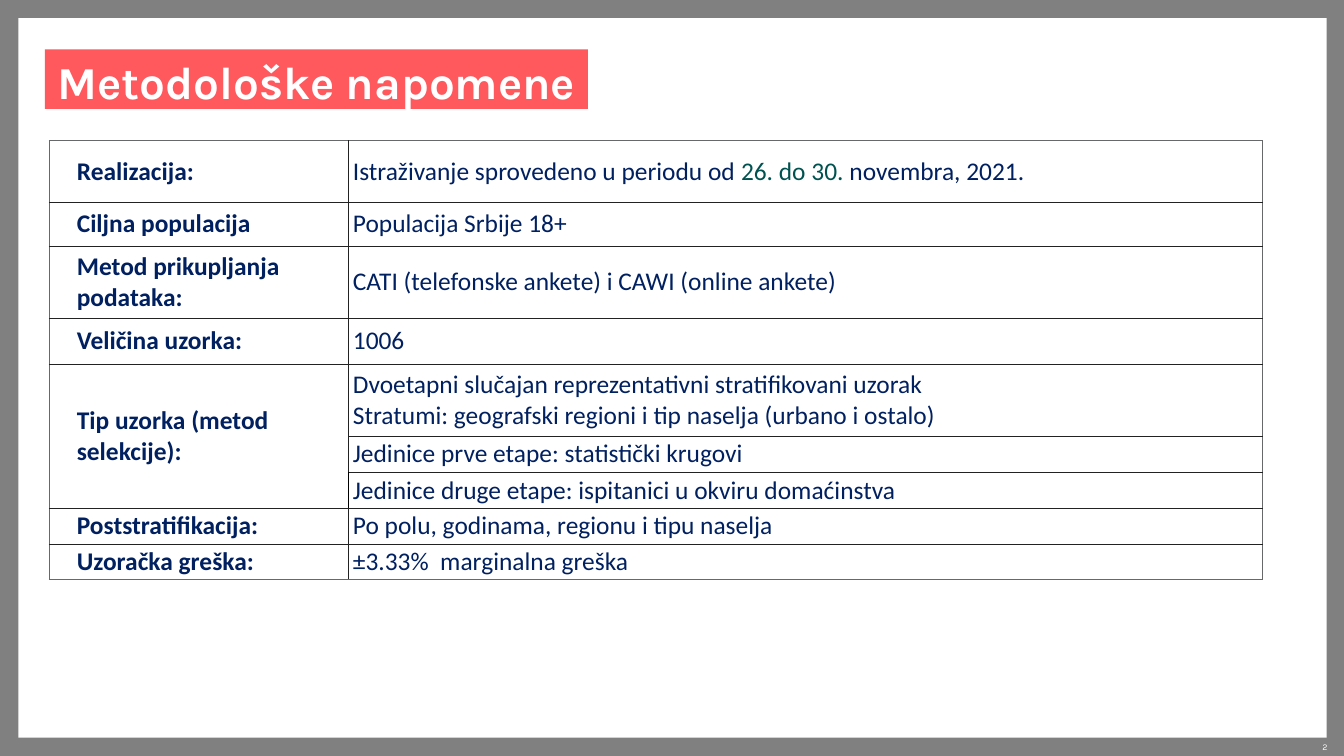
"""Build the survey method notes slide."""
from dataclasses import dataclass

from lxml.etree import SubElement
from pptx import Presentation
from pptx.dml.color import RGBColor as Rgb
from pptx.enum.shapes import MSO_SHAPE as Shape
from pptx.enum.text import MSO_ANCHOR as Anchor, PP_ALIGN as Align
from pptx.oxml.ns import qn
from pptx.util import Inches, Pt


@dataclass(frozen=True)
class Theme:
    """Hold colours, fonts and type sizes."""
    back: str = "808080"
    white: str = "FFFFFF"
    red: str = "FF585D"
    navy: str = "002060"
    teal: str = "005250"
    outer: str = "66686A"
    inner: str = "222223"
    black: str = "000000"
    head: str = "Karla"
    body: str = "Calibri"
    title: float = 36
    text: float = 20
    page: float = 7


@dataclass(frozen=True)
class Box:
    """Hold a place in inches."""
    left: float
    top: float
    width: float
    height: float

    def place(self) -> tuple:
        """Give the place as lengths."""
        return tuple(Inches(n) for n in (self.left, self.top, self.width, self.height))


@dataclass(frozen=True)
class Run:
    """Hold a piece of text and its colour."""
    text: str
    color: str


@dataclass(frozen=True)
class Row:
    """Hold a table row: height, label and lines of runs."""
    height: float
    label: str
    lines: tuple


LOOK = Theme()
COLS = (3.27, 10)
SEAM = 6


def plain(*lines: str) -> tuple:
    """Make one navy run for each line."""
    return tuple((Run(line, LOOK.navy),) for line in lines)


PERIOD = ((
    Run("Istraživanje sprovedeno u periodu od ", LOOK.navy),
    Run("26. do 30. ", LOOK.teal),
    Run("novembra, 2021.", LOOK.navy),
),)

ROWS = (
    Row(0.67, "Realizacija:", PERIOD),
    Row(0.48, "Ciljna populacija", plain("Populacija Srbije 18+")),
    Row(0.79, "Metod prikupljanja podataka:",
        plain("CATI (telefonske ankete) i CAWI (online ankete)")),
    Row(0.5, "Veličina uzorka:", plain("1006")),
    Row(0.79, "Tip uzorka (metod selekcije):",
        plain("Dvoetapni slučajan reprezentativni stratifikovani uzorak",
              "Stratumi: geografski regioni i tip naselja (urbano i ostalo)")),
    Row(0.4, "", plain("Jedinice prve etape: statistički krugovi")),
    Row(0.39, "", plain("Jedinice druge etape: ispitanici u okviru domaćinstva")),
    Row(0.39, "Poststratifikacija:", plain("Po polu, godinama, regionu i tipu naselja")),
    Row(0.39, "Uzoračka greška:", plain("±3.33%  marginalna greška")),
)


def write(para, text: str, *, size: float = LOOK.text, color: str = LOOK.navy,
          font: str = LOOK.body, bold: bool = False) -> None:
    """Add a formatted run to a paragraph."""
    run = para.add_run()
    run.text = text
    run.font.size = Pt(size)
    run.font.name = font
    run.font.bold = bold
    run.font.color.rgb = Rgb.from_string(color)


def panel(slide, box: Box, color: str):
    """Draw a filled rectangle with no line."""
    shape = slide.shapes.add_shape(Shape.RECTANGLE, *box.place())
    shape.shadow.inherit = False
    shape.fill.solid()
    shape.fill.fore_color.rgb = Rgb.from_string(color)
    shape.line.fill.background()
    return shape


def inset(frame, left: float, top: float, right: float, low: float) -> None:
    """Set the four margins of a frame or cell."""
    frame.margin_left, frame.margin_top = Inches(left), Inches(top)
    frame.margin_right, frame.margin_bottom = Inches(right), Inches(low)


def border(cell, row: int, col: int) -> None:
    """Line a cell: outer edges, inner rules and the dark seam."""
    edges = {"lnL": col == 0, "lnR": col == len(COLS) - 1,
             "lnT": row == 0, "lnB": row == len(ROWS) - 1}
    props = cell._tc.get_or_add_tcPr()
    for spot, (tag, edge) in enumerate(edges.items()):
        seam = row == SEAM and (col, tag) in ((0, "lnR"), (1, "lnL"))
        color = LOOK.black if seam else LOOK.outer if edge else LOOK.inner
        width = Pt(1 if edge or seam else 0.25)
        line = SubElement(props, qn(f"a:{tag}"), w=str(width))
        fill = SubElement(line, qn("a:solidFill"))
        SubElement(fill, qn("a:srgbClr"), val=color)
        props.insert(spot, line)


def title(slide) -> None:
    """Draw the title on its red band."""
    frame = panel(slide, Box(0.49, 0.54, 5.94, 0.65), LOOK.red).text_frame
    inset(frame, 0.09, 0.08, 0.09, 0)
    frame.word_wrap = False
    frame.vertical_anchor = Anchor.MIDDLE
    para = frame.paragraphs[0]
    para.alignment = Align.CENTER
    para.line_spacing = Pt(41)
    write(para, "Metodološke napomene", size=LOOK.title, color=LOOK.white,
          font=LOOK.head, bold=True)


def number(slide) -> None:
    """Draw the page number."""
    frame = slide.shapes.add_textbox(*Box(13.73, 8.1, 0.79, 0.13).place()).text_frame
    inset(frame, 0, 0, 0, 0)
    frame.word_wrap = True
    para = frame.paragraphs[0]
    para.alignment = Align.RIGHT
    para.line_spacing = 1.1
    write(para, "2", size=LOOK.page, color=LOOK.white, font=LOOK.head)


def notes(slide) -> None:
    """Draw the table of method notes."""
    box = Box(0.54, 1.54, sum(COLS), sum(row.height for row in ROWS))
    table = slide.shapes.add_table(len(ROWS), len(COLS), *box.place()).table
    table.first_row = table.horz_banding = False
    for col, width in enumerate(COLS):
        table.columns[col].width = Inches(width)
    for at, row in enumerate(ROWS):
        table.rows[at].height = Inches(row.height)
        for col in range(len(COLS)):
            cell = table.cell(at, col)
            cell.fill.background()
            cell.vertical_anchor = Anchor.MIDDLE
            inset(cell, 0.05, 0, 0.05, 0)
            border(cell, at, col)
        if row.label:
            para = table.cell(at, 0).text_frame.paragraphs[0]
            para._p.get_or_add_pPr().set("marL", str(Inches(0.25)))
            write(para, row.label, bold=True)
        frame = table.cell(at, 1).text_frame
        for spot, line in enumerate(row.lines):
            para = frame.add_paragraph() if spot else frame.paragraphs[0]
            for run in line:
                write(para, run.text, color=run.color)
    table.cell(4, 0).merge(table.cell(SEAM, 0))


def main() -> None:
    """Build and save the deck."""
    deck = Presentation()
    deck.slide_width, deck.slide_height = Inches(14.7), Inches(8.27)
    slide = deck.slides.add_slide(deck.slide_layouts[6])
    slide.background.fill.solid()
    slide.background.fill.fore_color.rgb = Rgb.from_string(LOOK.back)
    panel(slide, Box(0.2, 0.2, 14.31, 7.87), LOOK.white)
    number(slide)
    title(slide)
    notes(slide)
    deck.save("out.pptx")


if __name__ == "__main__":
    main()
